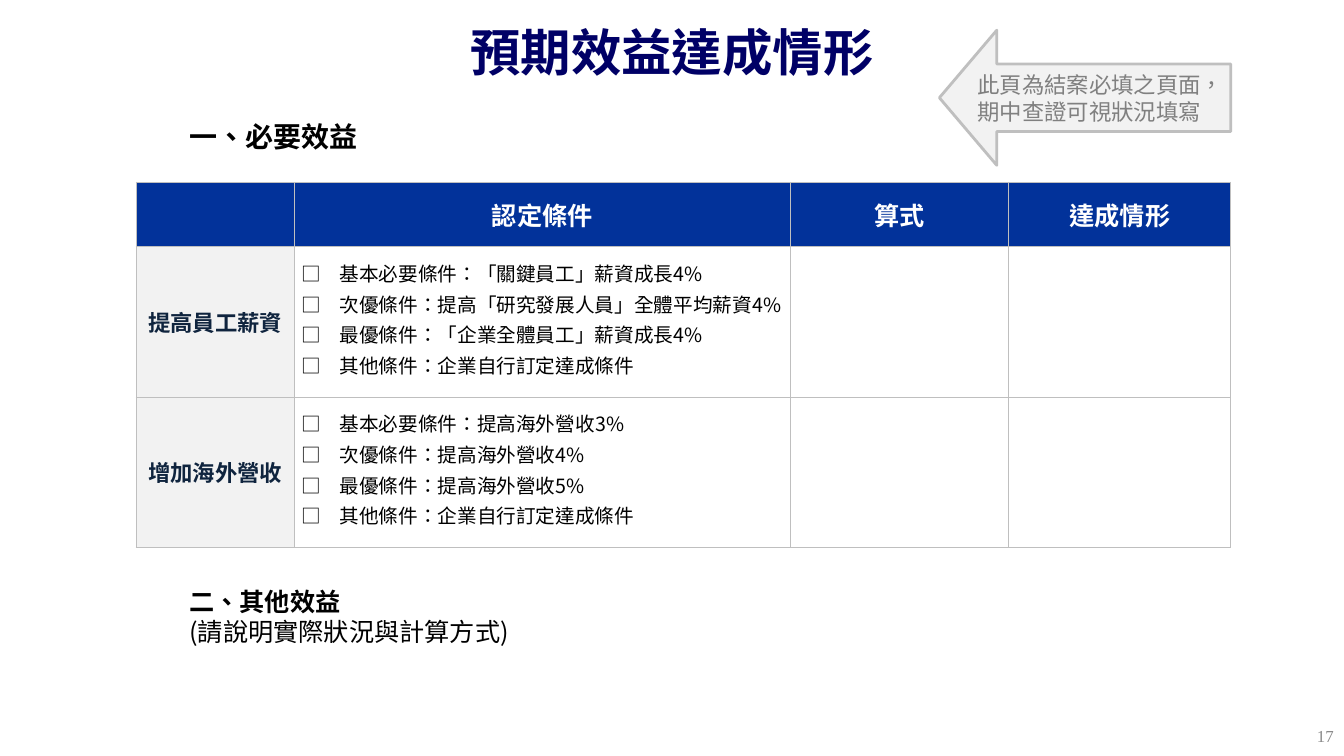
"""Build the slide on how far the expected benefits were achieved."""
from lxml import etree
from pptx import Presentation
from pptx import util as u
from pptx.dml.color import RGBColor
from pptx.enum import shapes, text
from pptx.oxml import ns

COLORS = {"title": "000066", "header": "02329A", "white": "FFFFFF", "label_fill": "F2F2F2",
          "label": "0F243E", "border": "BFBFBF", "black": "000000", "note": "808080",
          "number": "898989"}
SANS, SERIF = "Noto Sans CJK SC", "Times New Roman"

TITLE = "預期效益達成情形"
NOTE = "此頁為結案必填之頁面，期中查證可視狀況填寫"
REQUIRED = "一、必要效益"
OTHER = ["二、其他效益", "(請說明實際狀況與計算方式)"]
PAGE = "17"
HEADERS = ["", "認定條件", "算式", "達成情形"]
BENEFITS = [
    ("提高員工薪資", ["基本必要條件：「關鍵員工」薪資成長4%",
                "次優條件：提高「研究發展人員」全體平均薪資4%",
                "最優條件：「企業全體員工」薪資成長4%",
                "其他條件：企業自行訂定達成條件"]),
    ("增加海外營收", ["基本必要條件：提高海外營收3%",
                "次優條件：提高海外營收4%",
                "最優條件：提高海外營收5%",
                "其他條件：企業自行訂定達成條件"]),
]
COL_WIDTHS = [113, 354.2, 156.2, 158.6]
ROW_HEIGHTS = [46, 107.3, 107.3]
INDENT = 27.4

LEFT, CENTER = text.PP_ALIGN.LEFT, text.PP_ALIGN.CENTER
RIGHT, JUSTIFY = text.PP_ALIGN.RIGHT, text.PP_ALIGN.JUSTIFY
TOP, MIDDLE = text.MSO_ANCHOR.TOP, text.MSO_ANCHOR.MIDDLE


def points(*values):
    return [u.Pt(v) for v in values]


def rgb(name):
    return RGBColor.from_string(COLORS[name])


def write(p, line, size, color, bold=False, align=LEFT, font=SANS):
    p.text = line
    p.alignment = align
    for r in p.runs:
        r.font.size, r.font.bold, r.font.name = u.Pt(size), bold, font
        r.font.color.rgb = rgb(color)
        rPr = r.font._element
        rPr.set("lang", "zh-TW")
        ea = etree.SubElement(rPr, ns.qn("a:ea"))
        ea.set("typeface", SANS)


def add_text(parent, box, lines, size, color, bolds=(False,), align=LEFT, font=SANS,
             anchor=TOP, wrap=True, pitch=None):
    tf = parent.add_textbox(*points(*box)).text_frame
    tf.word_wrap, tf.vertical_anchor = wrap, anchor
    for i, (line, bold) in enumerate(zip(lines, bolds)):
        p = tf.add_paragraph() if i else tf.paragraphs[0]
        write(p, line, size, color, bold, align, font)
        if pitch:
            p.line_spacing = u.Pt(pitch)


def style_cell(cell, fill=None):
    cell.vertical_anchor = MIDDLE
    cell.margin_left = cell.margin_right = u.Pt(5)
    cell.margin_top = cell.margin_bottom = 0
    tcPr = cell._tc.get_or_add_tcPr()
    for side in ("lnL", "lnR", "lnT", "lnB"):
        ln = etree.SubElement(tcPr, ns.qn(f"a:{side}"), w=str(u.Pt(0.75)))
        solid = etree.SubElement(ln, ns.qn("a:solidFill"))
        etree.SubElement(solid, ns.qn("a:srgbClr"), val=COLORS["border"])
    if fill:
        cell.fill.solid()
        cell.fill.fore_color.rgb = rgb(fill)
    else:
        cell.fill.background()


def write_conditions(tf, conditions):
    for i, line in enumerate(conditions):
        p = tf.add_paragraph() if i else tf.paragraphs[0]
        write(p, line, 14, "black", align=JUSTIFY)
        p.line_spacing = u.Pt(16)
        p.space_before = u.Pt(6 if i else 0)
        pPr = p._p.get_or_add_pPr()
        pPr.set("marL", str(u.Pt(INDENT)))
        pPr.set("indent", str(-u.Pt(INDENT)))
        etree.SubElement(pPr, ns.qn("a:buFont"), typeface=SANS)
        etree.SubElement(pPr, ns.qn("a:buChar"), char="□")


def add_benefit_table(s):
    box = points(97.2, 130.3, sum(COL_WIDTHS), sum(ROW_HEIGHTS))
    table = s.shapes.add_table(len(ROW_HEIGHTS), len(COL_WIDTHS), *box).table
    for col, width in zip(table.columns, COL_WIDTHS):
        col.width = u.Pt(width)
    for row, height in zip(table.rows, ROW_HEIGHTS):
        row.height = u.Pt(height)
    for c, header in enumerate(HEADERS):
        cell = table.cell(0, c)
        style_cell(cell, "header")
        write(cell.text_frame.paragraphs[0], header, 18, "white", True, CENTER)
    for i, (label, conditions) in enumerate(BENEFITS, 1):
        for c in range(len(HEADERS)):
            style_cell(table.cell(i, c), None if c else "label_fill")
        write(table.cell(i, 0).text_frame.paragraphs[0], label, 16, "label", True, CENTER)
        write_conditions(table.cell(i, 1).text_frame, conditions)


def add_note(s):
    group = s.shapes.add_group_shape().shapes
    sp = group.add_shape(shapes.MSO_SHAPE.LEFT_ARROW, *points(671, 21.6, 208.1, 96.5))
    sp.adjustments[0], sp.adjustments[1] = 0.5, 0.425
    sp.shadow.inherit = False
    sp.fill.solid()
    sp.fill.fore_color.rgb = rgb("label_fill")
    sp.line.color.rgb = rgb("border")
    sp.line.width = u.Pt(2)
    add_text(group, (691.2, 46.8, 194.4, 46), [NOTE], 16, "note", pitch=19.3)


def main():
    prs = Presentation()
    prs.slide_width, prs.slide_height = points(960, 540)
    s = prs.slides.add_slide(prs.slide_layouts[5])
    title = s.shapes.title
    title.left, title.top, title.width, title.height = points(48, 11.5, 864, 57)
    title.text_frame.vertical_anchor = TOP
    write(title.text_frame.paragraphs[0], TITLE, 36, "title", True, CENTER, SERIF)
    add_benefit_table(s)
    add_text(s.shapes, (128.2, 82, 135.4, 32), [REQUIRED], 20, "black", (True,),
             wrap=False, pitch=24)
    add_text(s.shapes, (128.2, 415.4, 487.4, 80), OTHER, 18, "black", (True, False),
             pitch=21.5)
    add_text(s.shapes, (735.8, 511.2, 224, 28.8), [PAGE], 12, "number", align=RIGHT,
             font=SERIF, anchor=MIDDLE)
    add_note(s)
    prs.save("out.pptx")


if __name__ == "__main__":
    main()
